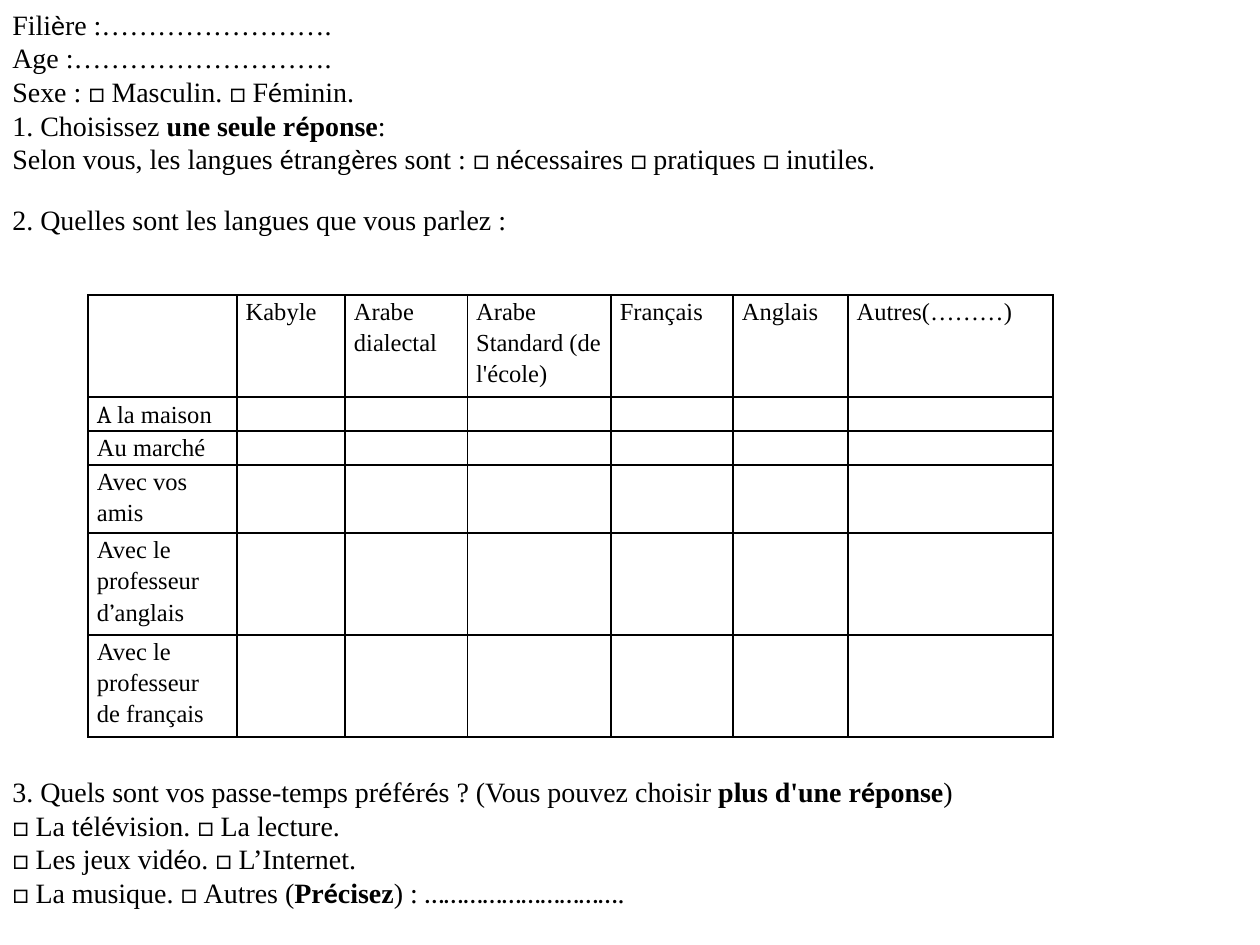
import dataclasses
import itertools

import pptx
import pptx.dml.color
import pptx.enum.text
import pptx.oxml.ns
import pptx.util
from lxml import etree

WIDE, HIGH = 10, 7.5
INK = "000000"
MAIN = "Times New Roman"
ANCHOR = pptx.enum.text.MSO_ANCHOR


@dataclasses.dataclass
class Block:
    """Lines of text; ~ toggles the second font and * toggles bold."""
    top: float
    height: float
    lines: list[str]
    anchor: ANCHOR = ANCHOR.MIDDLE


BLOCKS = [
    Block(0, 1.45, [
        "Fili~è~re :…………………….",
        "Age :……………………….",
        "Sexe : ~□ ~Masculin. ~□ ~F~é~minin.",
        "1. Choisissez *une seule r~é~ponse*:",
        "Selon vous, les langues ~é~trang~è~res sont : ~□ ~n~é~cessaires "
        "~□ ~pratiques ~□ ~inutiles.",
    ]),
    Block(1.56, 0.67, ["2. Quelles sont les langues que vous parlez :"], ANCHOR.TOP),
    Block(6.09, 1.18, [
        "3. Quels sont vos passe-temps pr~é~f~é~r~é~s ? "
        "(Vous pouvez choisir *plus d'une r~é~ponse*)",
        "~□ ~La t~é~l~é~vision. ~□ ~La lecture.",
        "~□ ~Les jeux vid~é~o. ~□ ~L’Internet.",
        "~□ ~La musique. ~□ ~Autres (*Pr~é~cisez*) : ~…………………………~.",
    ]),
]

LEFT, TOP = 0.7, 2.34
COLS = [1.18, 0.86, 0.97, 1.14, 0.97, 0.91, 1.63]
LINE = 0.27  # height of one text line in the table
ROWS = [3, 1, 1, 2, 3, 3]  # text lines per row
HEADS = ["Kabyle", "Arabe dialectal", "Arabe Standard (de l'école)",
         "Français", "Anglais", "Autres(………)"]
PLACES = ["~A ~la maison", "Au marché", "Avec vos amis",
          "Avec le professeur\nd~’~anglais", "Avec le professeur de français"]


def inch(size: float) -> int:
    return pptx.util.Inches(size)


def color(code: str) -> pptx.dml.color.RGBColor:
    return pptx.dml.color.RGBColor.from_string(code)


def write(frame, lines: list[str], size: int, other: str, space: float = 1) -> None:
    frame.text = "\n".join([""] * len(lines))
    for par, line in zip(frame.paragraphs, lines):
        par.line_spacing = space
        bold = False
        for turn, part in enumerate(line.split("~")):
            for step, text in enumerate(part.split("*")):
                bold ^= step > 0
                if not text:
                    continue
                run = par.add_run()
                run.text = text
                font = run.font
                font.name = other if turn % 2 else MAIN
                font.size = pptx.util.Pt(size)
                font.bold = bold
                font.color.rgb = color(INK)


def draw_block(slide, block: Block):
    box = slide.shapes.add_textbox(0, inch(block.top), inch(WIDE), inch(block.height))
    frame = box.text_frame
    frame.word_wrap = True
    frame.vertical_anchor = block.anchor
    write(frame, block.lines, 16, "Calibri")
    return frame


def frame_cell(cell) -> None:
    """Give the cell thin borders on all four sides."""
    props = cell._tc.get_or_add_tcPr()
    name = pptx.oxml.ns.qn
    for spot, side in enumerate(("lnL", "lnR", "lnT", "lnB")):
        line = etree.Element(name(f"a:{side}"), w=str(pptx.util.Pt(1)))
        fill = etree.SubElement(line, name("a:solidFill"))
        etree.SubElement(fill, name("a:srgbClr"), val=INK)
        props.insert(spot, line)


def draw_table(slide) -> None:
    table = slide.shapes.add_table(
        len(ROWS), len(COLS), inch(LEFT), inch(TOP),
        inch(sum(COLS)), inch(LINE * sum(ROWS))).table
    table.first_row = table.horz_banding = False
    for col, width in zip(table.columns, COLS):
        col.width = inch(width)
    for row, count in zip(table.rows, ROWS):
        row.height = inch(LINE * count)

    texts = {(0, col): text for col, text in enumerate(HEADS, 1)}
    texts |= {(row, 0): text for row, text in enumerate(PLACES, 1)}
    for spot in itertools.product(range(len(ROWS)), range(len(COLS))):
        cell = table.cell(*spot)
        cell.fill.background()
        cell.margin_left = cell.margin_right = inch(0.07)
        cell.margin_top = cell.margin_bottom = 0
        frame_cell(cell)
        if spot in texts:
            write(cell.text_frame, texts[spot].split("\n"), 14, "Cambria", 1.15)
        else:
            par = cell.text_frame.paragraphs[0]._p
            etree.SubElement(par, pptx.oxml.ns.qn("a:endParaRPr"), sz="1400")


def main() -> None:
    deck = pptx.Presentation()
    deck.slide_width, deck.slide_height = inch(WIDE), inch(HIGH)
    slide = deck.slides.add_slide(deck.slide_layouts[6])
    frames = [draw_block(slide, block) for block in BLOCKS]
    stop = frames[0].paragraphs[-1].runs[-1]
    if stop.text.endswith("."):
        stop.font.size = pptx.util.Pt(16)
    draw_table(slide)
    deck.save("out.pptx")


if __name__ == "__main__":
    main()
